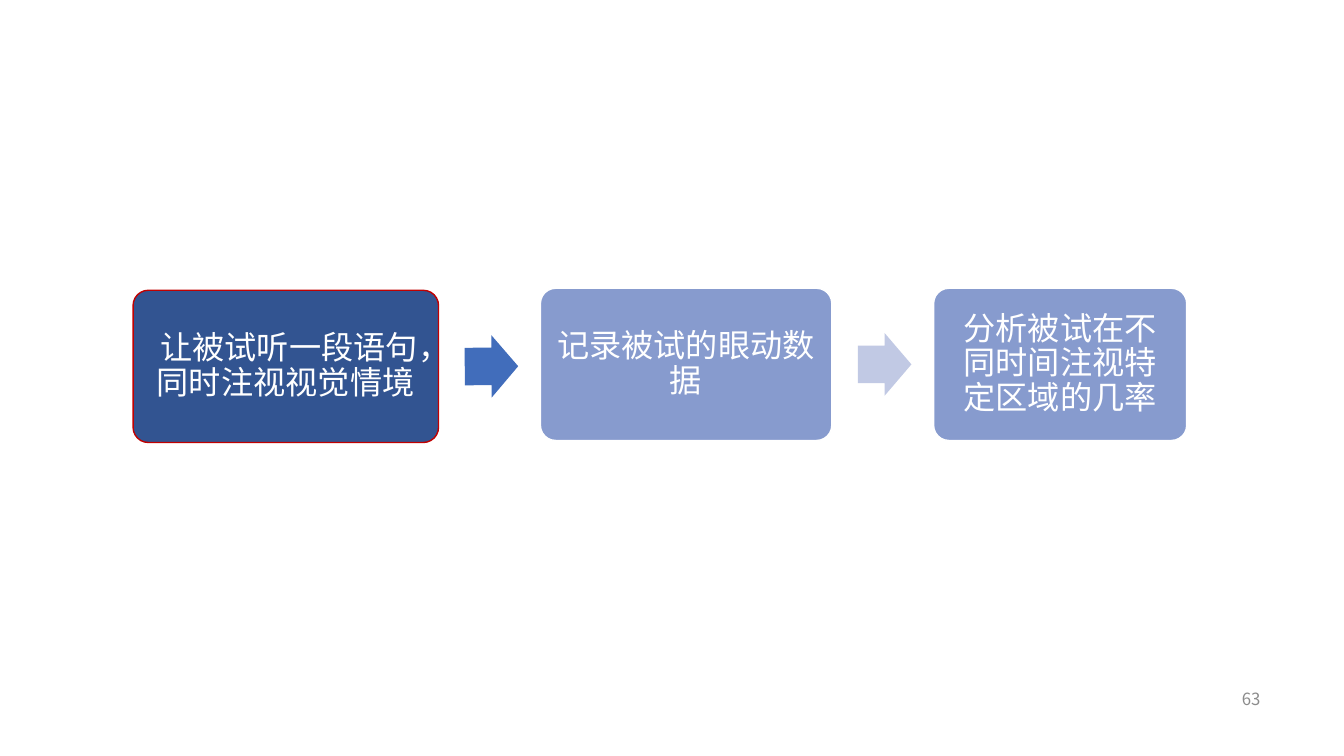
"""Build a slide with a three-step process flow."""
import pptx
import pptx.util
import pptx.dml.color
import pptx.enum.shapes
import pptx.enum.text
import pptx.oxml.ns
import lxml.etree

Inches = pptx.util.Inches
Pt = pptx.util.Pt
KIND = pptx.enum.shapes.MSO_SHAPE
ALIGN = pptx.enum.text.PP_ALIGN

FONT = "Noto Sans CJK SC"
COLORS = {
    "dark": "325491", "soft": "879BCE", "red": "C00000", "white": "FFFFFF",
    "blue": "416DBB", "pale": "C1C9E4", "gray": "8C8C8C",
}
STEPS = [
    {"text": " 让被试听一段语句，同时注视视觉情境", "width": 3.03, "top": 2.88,
     "fill": "dark", "line": "red"},
    {"text": "记录被试的眼动数据", "width": 2.89, "top": 2.86,
     "fill": "soft", "line": "white"},
    {"text": "分析被试在不同时间注视特定区域的几率", "width": 2.51, "top": 2.86,
     "fill": "soft", "line": "white"},
]
ARROWS = [{"fill": "blue", "turn": -0.3}, {"fill": "pale", "turn": 0}]
PAGE = "63"
LEFT, HIGH, GAP = 1.32, 1.51, 1.01
ARROW_W, ARROW_H, ARROW_GAP = 0.53, 0.62, 0.26


def color(name):
    """Return the named colour."""
    return pptx.dml.color.RGBColor.from_string(COLORS[name])


def write(shape, text, size=23, tint="white", align=ALIGN.CENTER, inset=0.1, space=0.9):
    """Put formatted text into a shape."""
    frame = shape.text_frame
    frame.word_wrap = True
    frame.vertical_anchor = pptx.enum.text.MSO_ANCHOR.MIDDLE
    frame.margin_left = frame.margin_right = Inches(inset)
    frame.margin_top = frame.margin_bottom = Inches(inset)
    para = frame.paragraphs[0]
    para.alignment = align
    para.line_spacing = space
    run = para.add_run()
    run.text = text
    run.font.size = Pt(size)
    run.font.name = FONT
    run.font.color.rgb = color(tint)
    east = lxml.etree.SubElement(run._r.get_or_add_rPr(), pptx.oxml.ns.qn("a:ea"))
    east.set("typeface", FONT)


def draw(slide, kind, box, fill, adjust, line=None):
    """Add a filled preset shape."""
    shape = slide.shapes.add_shape(kind, *map(Inches, box))
    shape.shadow.inherit = False
    for index, value in enumerate(adjust):
        shape.adjustments[index] = value
    shape.fill.solid()
    shape.fill.fore_color.rgb = color(fill)
    if line:
        shape.line.color.rgb = color(line)
        shape.line.width = Pt(1)
    else:
        shape.line.fill.background()
    return shape


def main():
    """Lay out the flow and save the file."""
    deck = pptx.Presentation()
    deck.slide_width, deck.slide_height = Inches(13.33), Inches(7.5)
    slide = deck.slides.add_slide(deck.slide_layouts[6])

    number = slide.shapes.add_textbox(*map(Inches, (9.42, 6.82, 3.18, 0.23)))
    write(number, PAGE, size=12, tint="gray", align=ALIGN.RIGHT, space=1.0)

    left = LEFT
    for index, step in enumerate(STEPS):
        box = (left, step["top"], step["width"], HIGH)
        card = draw(slide, KIND.ROUNDED_RECTANGLE, box, step["fill"], [0.1], step["line"])
        write(card, step["text"])
        left += step["width"]
        if index < len(ARROWS):
            arrow = ARROWS[index]
            top = step["top"] + (HIGH - ARROW_H) / 2
            box = (left + ARROW_GAP, top, ARROW_W, ARROW_H)
            shape = draw(slide, KIND.RIGHT_ARROW, box, arrow["fill"], [0.6, 0.5])
            shape.rotation = arrow["turn"]
        left += GAP

    deck.save("out.pptx")


if __name__ == "__main__":
    main()
